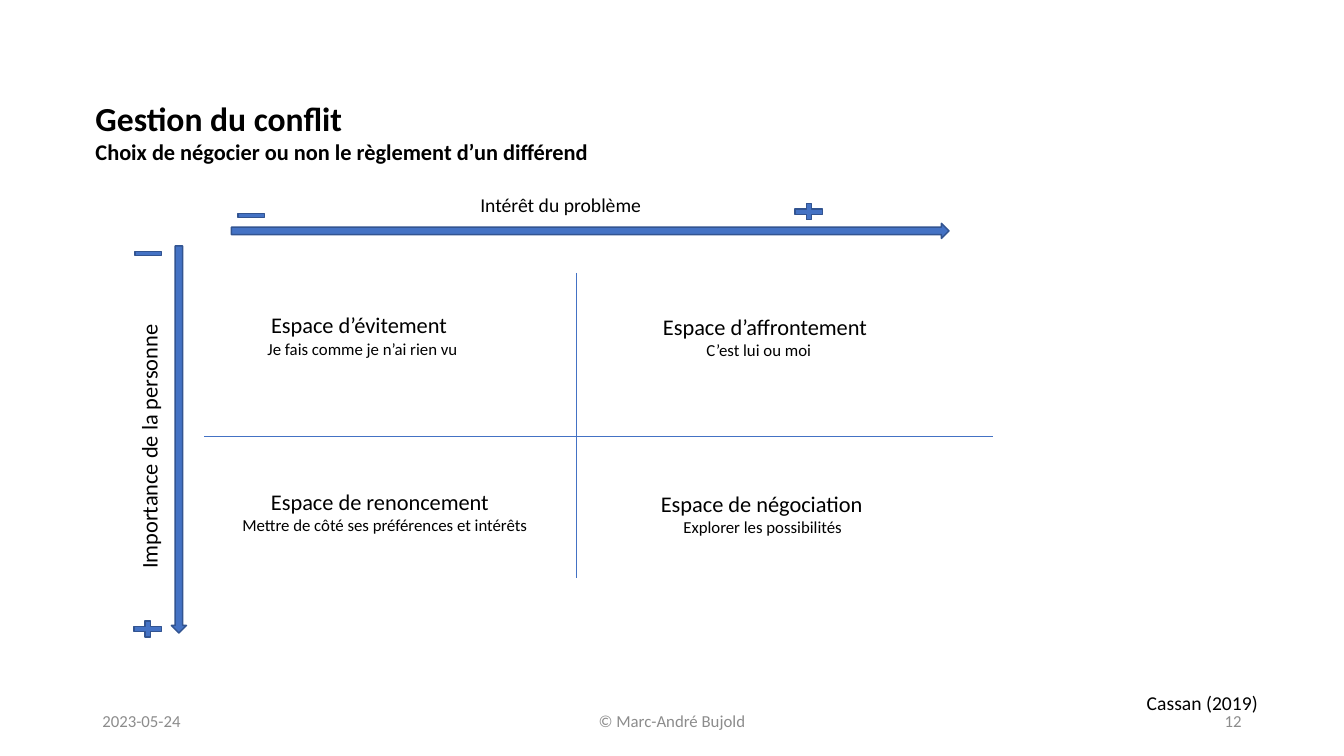
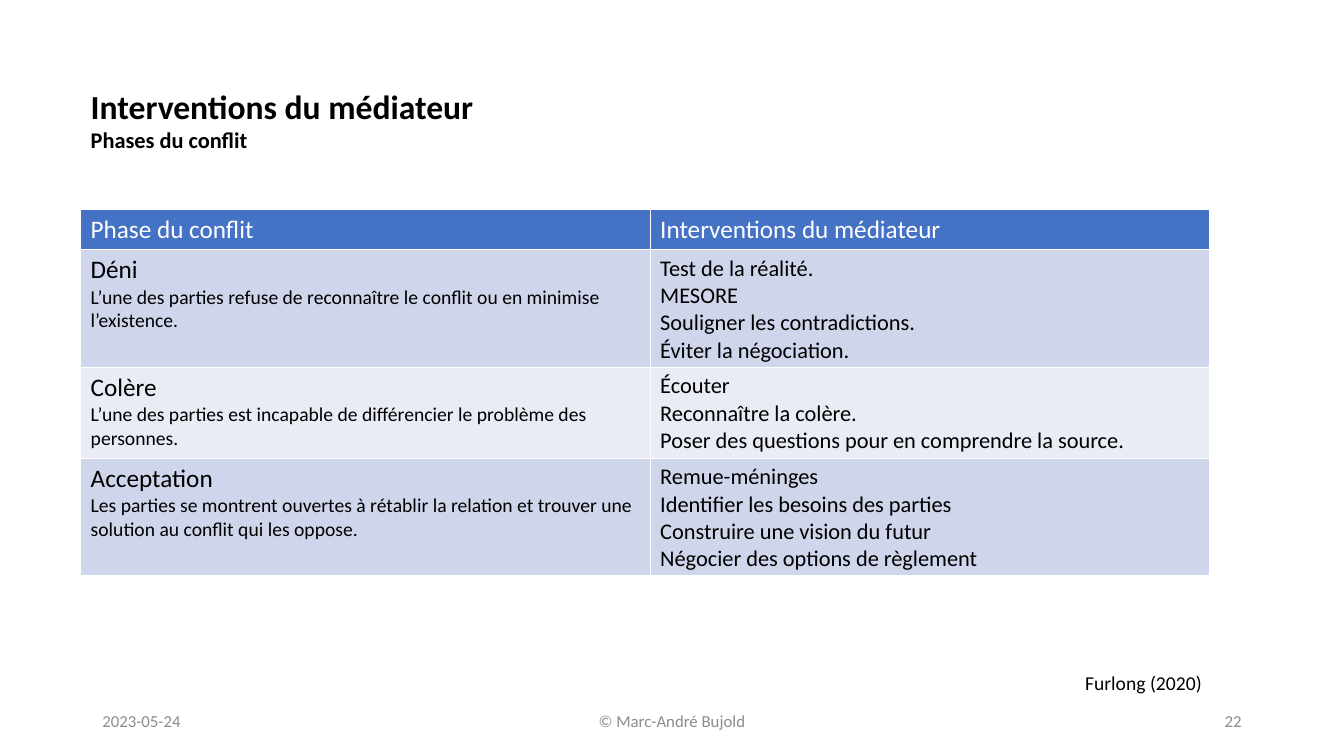
import pptx
import pptx.dml.color
import pptx.enum.shapes
import pptx.enum.text
import pptx.oxml
import pptx.oxml.ns
import pptx.util

Pt = pptx.util.Pt
hex_color = pptx.dml.color.RGBColor.from_string
SHAPE = pptx.enum.shapes.MSO_SHAPE
ALIGN = pptx.enum.text.PP_ALIGN
ANCHOR = pptx.enum.text.MSO_ANCHOR

FONT = "Calibri"
BLACK, WHITE, GREY = "000000", "FFFFFF", "8C8C8C"
BLUE, DARK_BLUE = "4472C4", "325491"
BAND_DARK, BAND_LIGHT = "CFD5EA", "E9EBF5"


def write(frame, lines, color=BLACK, bold=False, align=ALIGN.LEFT):
    """Fill a text frame with one paragraph per (text, size) pair."""
    for index, (text, size) in enumerate(lines):
        paragraph = frame.paragraphs[0] if index == 0 else frame.add_paragraph()
        paragraph.alignment = align
        run = paragraph.add_run()
        run.text = text
        run.font.name = FONT
        run.font.size = Pt(size)
        run.font.bold = bold
        run.font.color.rgb = hex_color(color)


def add_label(slide, text, size, left, top, width, height):
    """Add an unwrapped one-line text box."""
    label = slide.shapes.add_textbox(Pt(left), Pt(top), Pt(width), Pt(height))
    label.text_frame.word_wrap = False
    label.text_frame.auto_size = pptx.enum.text.MSO_AUTO_SIZE.SHAPE_TO_FIT_TEXT
    write(label.text_frame, [(text, size)])
    return label


deck = pptx.Presentation()
deck.slide_width, deck.slide_height = Pt(960), Pt(540)
title_only = deck.slide_layouts[5]

# Title, source and footer of each slide
headings = [
    ("Gestion du conflit", "Choix de négocier ou non le règlement d’un différend",
     (61, 66, 400, 56), "Cassan (2019)", (812, 490, 95, 24), "12"),
    ("Interventions du médiateur", "Phases du conflit",
     (57.6, 57.6, 480, 56), "Furlong (2020)", (768, 476, 99, 24), "22"),
]
for heading, subheading, title_box, source, source_box, page in headings:
    slide = deck.slides.add_slide(title_only)
    title = slide.shapes.title
    title.left, title.top, title.width, title.height = map(Pt, title_box)
    title.text_frame.word_wrap = True
    title.text_frame.auto_size = pptx.enum.text.MSO_AUTO_SIZE.NONE
    title.text_frame.vertical_anchor = ANCHOR.TOP
    write(title.text_frame, [(heading, 24), (subheading, 16)], bold=True)
    add_label(slide, source, 14, *source_box)

    for text, left, width, align in [
        ("2023-05-24", 66, 216, ALIGN.LEFT),
        ("© Marc-André Bujold", 318, 324, ALIGN.CENTER),
        (page, 678, 216, ALIGN.RIGHT),
    ]:
        footer = slide.shapes.add_textbox(Pt(left), Pt(500.5), Pt(width), Pt(28.8))
        footer.text_frame.word_wrap = True
        footer.text_frame.vertical_anchor = ANCHOR.MIDDLE
        write(footer.text_frame, [(text, 12)], GREY, align=align)

matrix_slide, phases_slide = deck.slides

# Matrix of the four spaces
for x1, y1, x2, y2 in [(411.8, 195, 411.8, 413), (146, 311.8, 709, 311.8)]:
    divider = matrix_slide.shapes.add_connector(
        pptx.enum.shapes.MSO_CONNECTOR.STRAIGHT, Pt(x1), Pt(y1), Pt(x2), Pt(y2))
    divider.line.color.rgb = hex_color(BLUE)
    divider.line.width = Pt(0.5)
    divider.element.spPr.append(pptx.oxml.parse_xml(
        f"<a:effectLst {pptx.oxml.ns.nsdecls('a')}/>"))

# Each space: name, left, top, width, then detail, left, width
spaces = [
    ("Espace d’évitement", 186.5, 219, 142, "Je fais comme je n’ai rien vu", 184, 152),
    ("Espace d’affrontement", 466.5, 219.8, 163, "C’est lui ou moi", 497.5, 90),
    ("Espace de renoncement", 186.5, 345, 172,
     "Mettre de côté ses préférences et intérêts", 166, 221),
    ("Espace de négociation", 465, 346.3, 160.5, "Explorer les possibilités", 481, 129),
]
for name, left, top, width, detail, detail_left, detail_width in spaces:
    add_label(matrix_slide, name, 16, left, top, width, 26.6)
    add_label(matrix_slide, detail, 12, detail_left, top + 19.3, detail_width, 21.8)

add_label(matrix_slide, "Intérêt du problème", 14, 336, 134, 130.5, 24.2)
person_axis = add_label(matrix_slide, "Importance de la personne", 16, 10.8, 304.6, 191, 26.6)
person_axis.rotation = 270

for preset, left, top, width, height in [
    (SHAPE.RIGHT_ARROW, 165.3, 159.5, 512.6, 10.8),
    (SHAPE.DOWN_ARROW, 122.4, 175.7, 10.8, 276.5),
    (SHAPE.MATH_MINUS, 166.5, 148.5, 26, 10.8),
    (SHAPE.MATH_PLUS, 564.5, 143.3, 26.6, 15.8),
    (SHAPE.MATH_MINUS, 93, 175.7, 26, 10.8),
    (SHAPE.MATH_PLUS, 92.2, 441.4, 26.6, 15.8),
]:
    mark = matrix_slide.shapes.add_shape(preset, Pt(left), Pt(top), Pt(width), Pt(height))
    mark.shadow.inherit = False
    mark.fill.solid()
    mark.fill.fore_color.rgb = hex_color(BLUE)
    mark.line.color.rgb = hex_color(DARK_BLUE)
    mark.line.width = Pt(1)

# Table of conflict phases
phases = [
    ("Déni", "L’une des parties refuse de reconnaître le conflit ou en minimise l’existence.",
     ["Test de la réalité.", "MESORE", "Souligner les contradictions.",
      "Éviter la négociation."]),
    ("Colère", "L’une des parties est incapable de différencier le problème des personnes.",
     ["Écouter", "Reconnaître la colère.",
      "Poser des questions pour en comprendre la source."]),
    ("Acceptation", "Les parties se montrent ouvertes à rétablir la relation et trouver une "
     "solution au conflit qui les oppose.",
     ["Remue-méninges", "Identifier les besoins des parties",
      "Construire une vision du futur", "Négocier des options de règlement"]),
]
rows = [([("Phase du conflit", 18)], [("Interventions du médiateur", 18)])]
for phase, description, interventions in phases:
    rows.append(([(phase, 18), (description, 14)], [(text, 16) for text in interventions]))

table = phases_slide.shapes.add_table(
    len(rows), 2, Pt(57.6), Pt(149.5), Pt(806.4), Pt(261)).table
for column, width in zip(table.columns, (406.8, 399.6)):
    column.width = Pt(width)
for row, height in zip(table.rows, (28, 84, 65, 84)):
    row.height = Pt(height)

for row_index, row in enumerate(rows):
    header = row_index == 0
    fill = BLUE if header else (BAND_DARK if row_index % 2 else BAND_LIGHT)
    for column_index, lines in enumerate(row):
        cell = table.cell(row_index, column_index)
        write(cell.text_frame, lines, WHITE if header else BLACK)
        cell.fill.solid()
        cell.fill.fore_color.rgb = hex_color(fill)
        properties = cell._tc.get_or_add_tcPr()
        for position, side in enumerate("LRTB"):
            properties.insert(position, pptx.oxml.parse_xml(
                f'<a:ln{side} {pptx.oxml.ns.nsdecls("a")} w="{Pt(1)}"><a:solidFill>'
                f'<a:srgbClr val="{WHITE}"/></a:solidFill></a:ln{side}>'))

deck.save("out.pptx")
